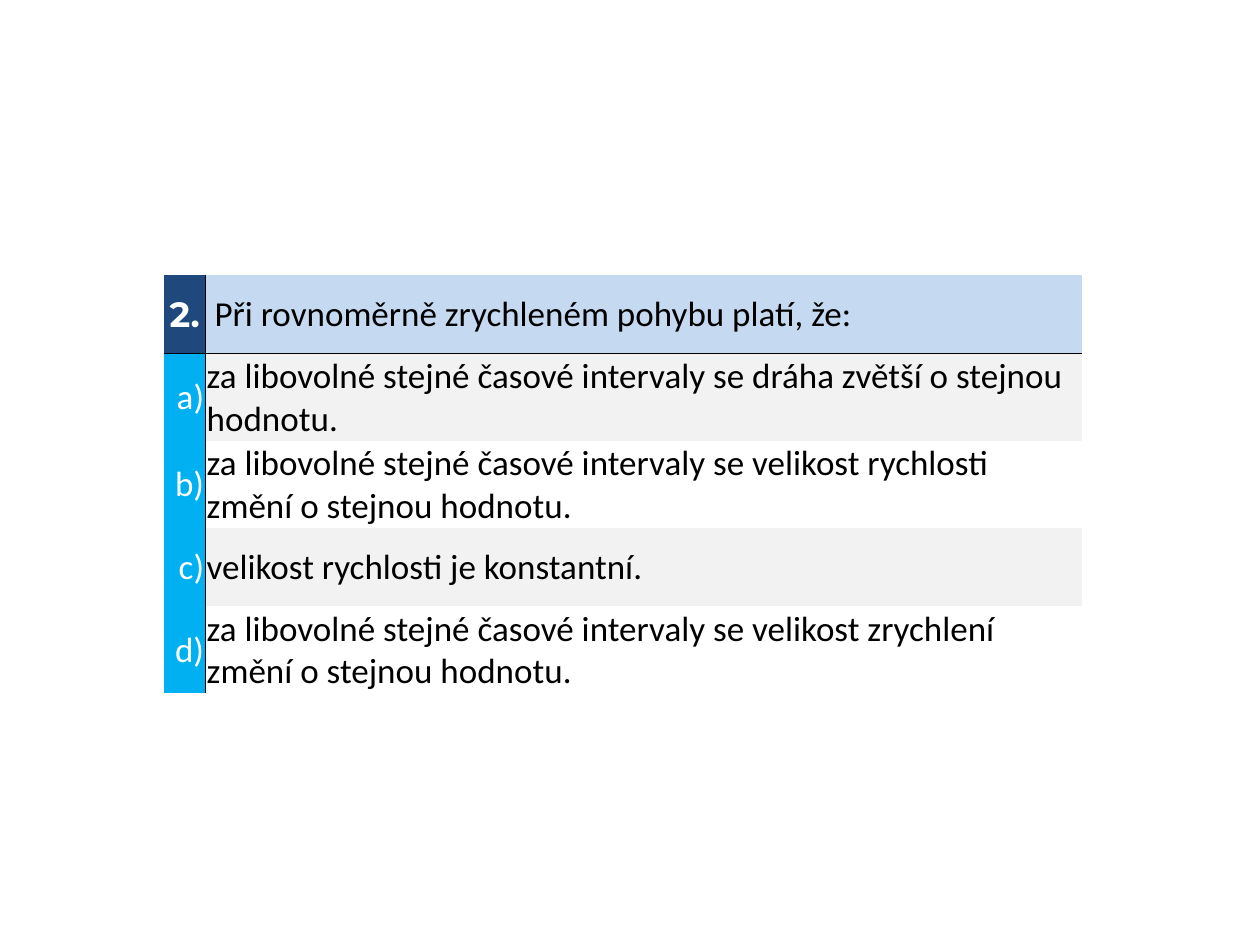
from dataclasses import dataclass
from typing import Optional

from lxml.etree import SubElement
from pptx import Presentation
from pptx.dml.color import RGBColor
from pptx.enum.text import MSO_ANCHOR, PP_ALIGN
from pptx.oxml.ns import qn
from pptx.util import Pt

WHITE = RGBColor(0xFF, 0xFF, 0xFF)
BLACK = RGBColor(0x00, 0x00, 0x00)
NAVY = RGBColor(0x1F, 0x49, 0x7D)
PALE_BLUE = RGBColor(0xC5, 0xD9, 0xF1)
SKY_BLUE = RGBColor(0x00, 0xB0, 0xF0)
PALE_GRAY = RGBColor(0xF2, 0xF2, 0xF2)

COLUMN_WIDTHS = (Pt(23.8), Pt(501))
ROW_HEIGHT = Pt(45)
INSET = Pt(0.75)
QUESTION_INDENT = Pt(5.25)

QUESTION = "Při rovnoměrně zrychleném pohybu platí, že:"
ANSWERS = (
    "za libovolné stejné časové intervaly se dráha zvětší o stejnou hodnotu.",
    "za libovolné stejné časové intervaly se velikost rychlosti změní o stejnou hodnotu.",
    "velikost rychlosti je konstantní.",
    "za libovolné stejné časové intervaly se velikost zrychlení změní o stejnou hodnotu.",
)


@dataclass(frozen=True)
class CellStyle:
    color: RGBColor
    fill: Optional[RGBColor]
    borders: str
    align: PP_ALIGN = PP_ALIGN.LEFT
    font: str = "Calibri"
    bold: bool = False
    left_inset: Pt = INSET


def set_borders(cell, sides: str) -> None:
    """Draw thin black lines on the named sides (L, R, T, B) and clear the others."""
    properties = cell._tc.get_or_add_tcPr()
    for side in "LRTB":
        line = SubElement(properties, qn(f"a:ln{side}"), w=str(Pt(0.5)))
        if side in sides:
            fill = SubElement(line, qn("a:solidFill"))
            SubElement(fill, qn("a:srgbClr"), val=str(BLACK))
        else:
            SubElement(line, qn("a:noFill"))


def write_cell(cell, text: str, style: CellStyle) -> None:
    set_borders(cell, style.borders)
    if style.fill is None:
        cell.fill.background()
    else:
        cell.fill.solid()
        cell.fill.fore_color.rgb = style.fill
    cell.vertical_anchor = MSO_ANCHOR.MIDDLE
    cell.margin_left = style.left_inset
    cell.margin_right = cell.margin_top = INSET
    cell.margin_bottom = 0
    cell.text_frame.text = text
    para = cell.text_frame.paragraphs[0]
    para.alignment = style.align
    span = para.runs[0]
    span.font.name = style.font
    span.font.size = Pt(20)
    span.font.bold = style.bold
    span.font.color.rgb = style.color


def add_quiz_table(page) -> None:
    row_count = len(ANSWERS) + 1
    table = page.shapes.add_table(
        row_count, len(COLUMN_WIDTHS), Pt(93.6), Pt(157),
        sum(COLUMN_WIDTHS), ROW_HEIGHT * row_count,
    ).table
    table.first_row = table.horz_banding = False
    for column, width in zip(table.columns, COLUMN_WIDTHS):
        column.width = width
    for row in table.rows:
        row.height = ROW_HEIGHT

    number_style = CellStyle(WHITE, NAVY, "RB", PP_ALIGN.CENTER, "Montserrat", True)
    question_style = CellStyle(BLACK, PALE_BLUE, "LB", left_inset=QUESTION_INDENT)
    write_cell(table.cell(0, 0), "2.", number_style)
    write_cell(table.cell(0, 1), QUESTION, question_style)

    for index, (letter, answer) in enumerate(zip("abcd", ANSWERS), start=1):
        top = "T" if index == 1 else ""
        band = PALE_GRAY if index % 2 else None
        letter_style = CellStyle(WHITE, SKY_BLUE, "R" + top, PP_ALIGN.RIGHT)
        write_cell(table.cell(index, 0), f"{letter})", letter_style)
        write_cell(table.cell(index, 1), answer, CellStyle(BLACK, band, "L" + top))


def main() -> None:
    deck = Presentation()
    deck.slide_width, deck.slide_height = Pt(720), Pt(540)
    page = deck.slides.add_slide(deck.slide_layouts[6])
    add_quiz_table(page)
    deck.save("out.pptx")


if __name__ == "__main__":
    main()
